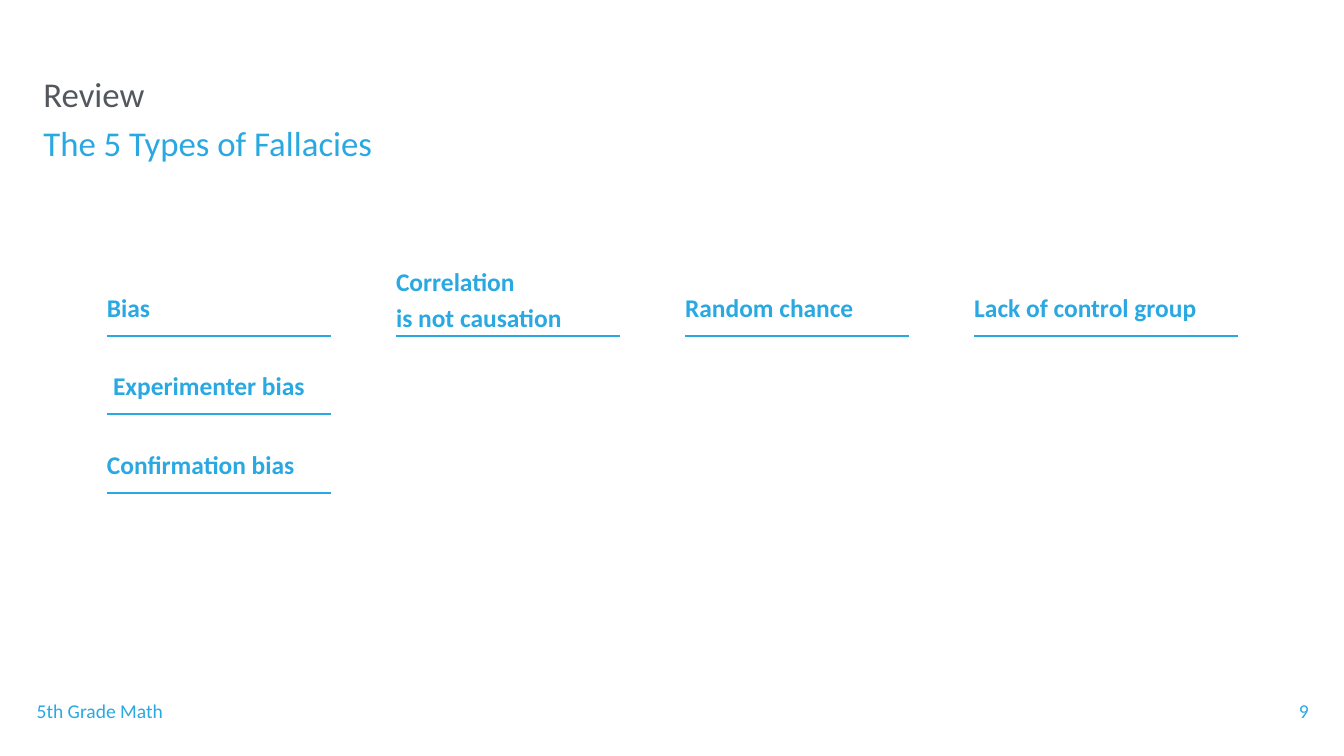
from pptx import Presentation
from pptx.dml.color import RGBColor
from pptx.enum.shapes import MSO_CONNECTOR
from pptx.oxml.ns import qn
from pptx.util import Inches, Pt
from lxml.etree import SubElement

BLUE = "29A8E1"
GRAY = "53585E"
WIDTH, HEIGHT = 21.99, 12.37
COLUMN_STEP, ROW_STEP = 4.73, 1.28
RULE_WIDTH, LAST_RULE_WIDTH = 3.66, 4.31


def color(hex_code):
    """Turn a hex string into a colour."""
    return RGBColor.from_string(hex_code)


def add_text(slide, box, lines, size, colors=(BLUE,), bold=False, spacing=1):
    """Place lines of text in a box without margins."""
    frame = slide.shapes.add_textbox(*map(Inches, box)).text_frame
    frame.word_wrap = True
    frame.margin_left = frame.margin_right = 0
    frame.margin_top = frame.margin_bottom = 0
    frame.text = "\n".join(lines)
    for index, paragraph in enumerate(frame.paragraphs):
        paragraph.line_spacing = spacing
        font = paragraph.font
        font.name, font.size, font.bold = "Calibri", Pt(size), bold
        font.color.rgb = color(colors[index % len(colors)])


def add_rule(slide, left, top, width):
    """Draw a horizontal blue rule."""
    rule = slide.shapes.add_connector(
        MSO_CONNECTOR.STRAIGHT, *map(Inches, (left, top, left + width, top)))
    rule.line.color.rgb = color(BLUE)
    rule.line.width = Pt(2.47)
    SubElement(rule._element.spPr, qn("a:effectLst"))


def add_heading(slide, left, top, width, height):
    """Write the title with its blue second line."""
    add_text(slide, (left, top, width, height),
             ["Review", "The 5 Types of Fallacies"], 41, (GRAY, BLUE), spacing=1.18)


def add_fallacies(slide, left, top):
    """Set the fallacies on a grid whose first rule starts at left, top."""
    fallacies = [
        (0, 0, ["Bias"], 0),
        (0, 1, ["Experimenter bias"], 0.1),
        (0, 2, ["Confirmation bias"], 0),
        (1, 0, ["Correlation", "is not causation"], 0),
        (2, 0, ["Random chance"], 0),
        (3, 0, ["Lack of control group"], 0),
    ]
    for column, row, lines, indent in fallacies:
        rule_left = left + column * COLUMN_STEP
        rule_top = top + row * ROW_STEP
        rule_width = LAST_RULE_WIDTH if column == 3 else RULE_WIDTH
        rise, spacing = (0.72, 1) if len(lines) == 1 else (1.22, 1.16)
        add_text(slide, (rule_left + indent, rule_top - rise, rule_width, rise - 0.2),
                 lines, 30, bold=True, spacing=spacing)
        add_rule(slide, rule_left, rule_top, rule_width)


def add_footer(slide, left, top, right):
    """Write the course name and the page number."""
    add_text(slide, (left, top, 2.6, 0.39), ["5th Grade Math"], 23)
    add_text(slide, (right - 0.22, top, 0.22, 0.39), ["9"], 23)


def main():
    """Build the slide and save it."""
    deck = Presentation()
    deck.slide_width, deck.slide_height = Inches(WIDTH), Inches(HEIGHT)
    slide = deck.slides.add_slide(deck.slide_layouts[6])
    add_heading(slide, 0.71, 1.06, 6.5, 1.51)
    add_fallacies(slide, 1.75, 5.5)
    add_footer(slide, 0.6, HEIGHT - 0.94, WIDTH - 0.52)
    deck.save("out.pptx")


if __name__ == "__main__":
    main()
